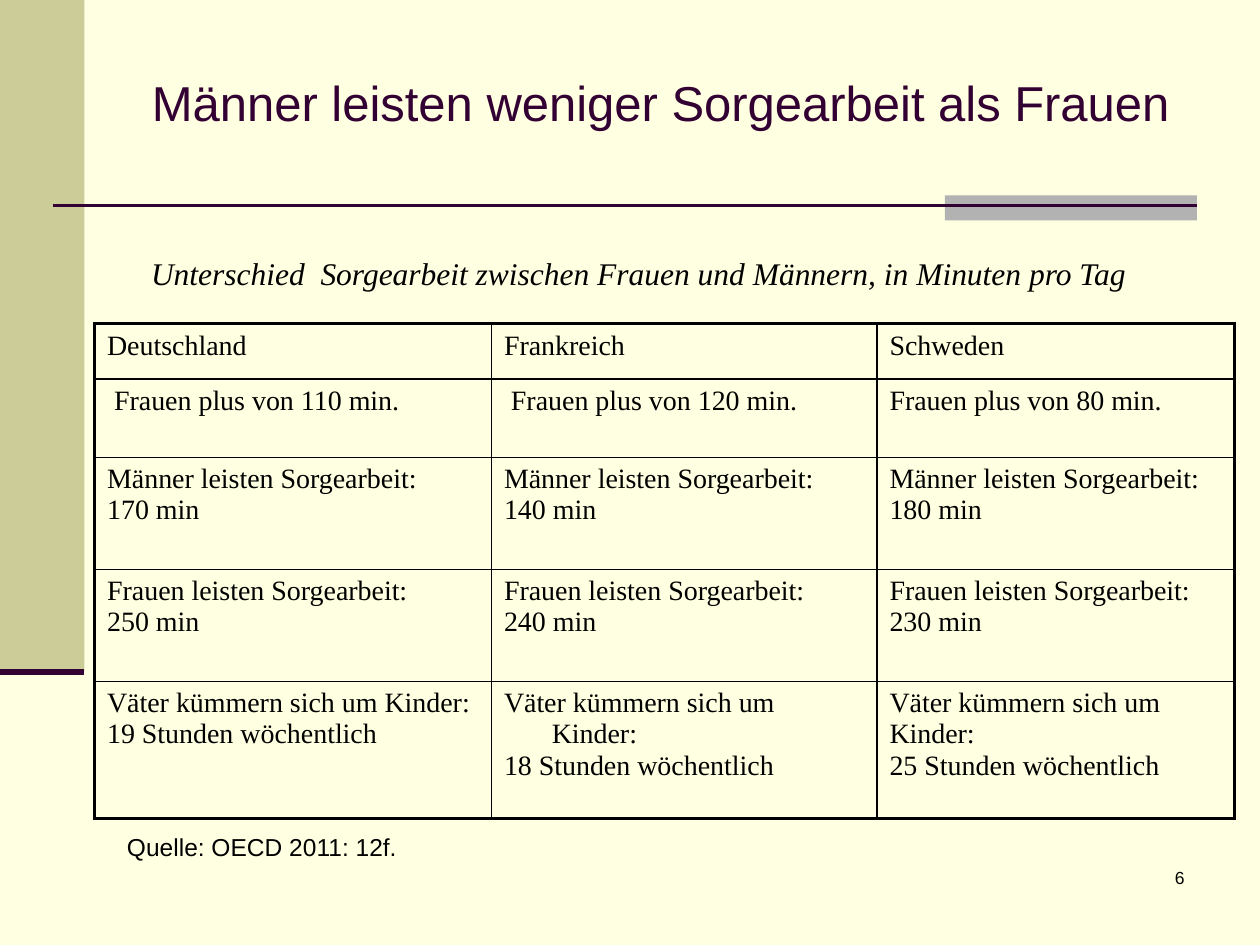
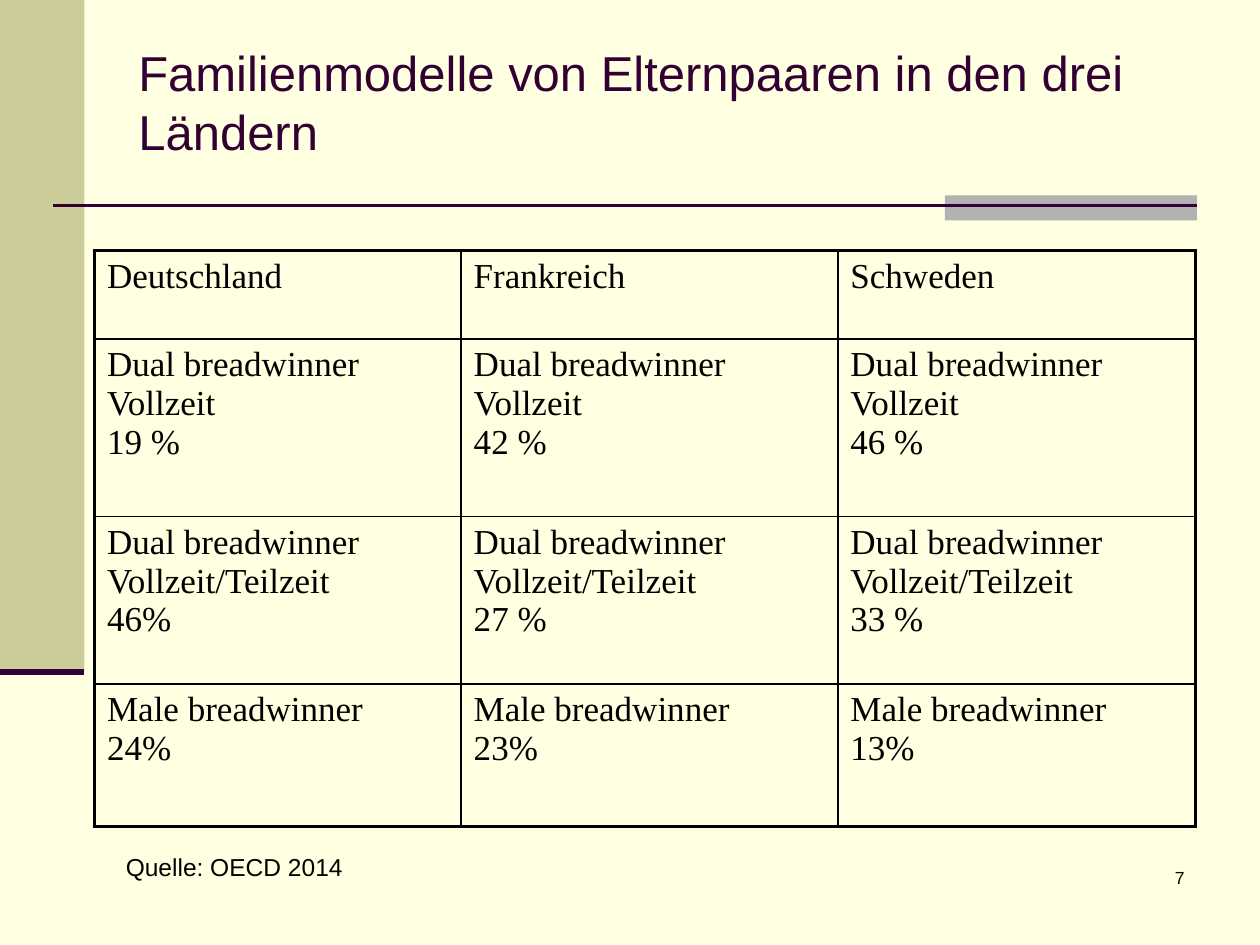
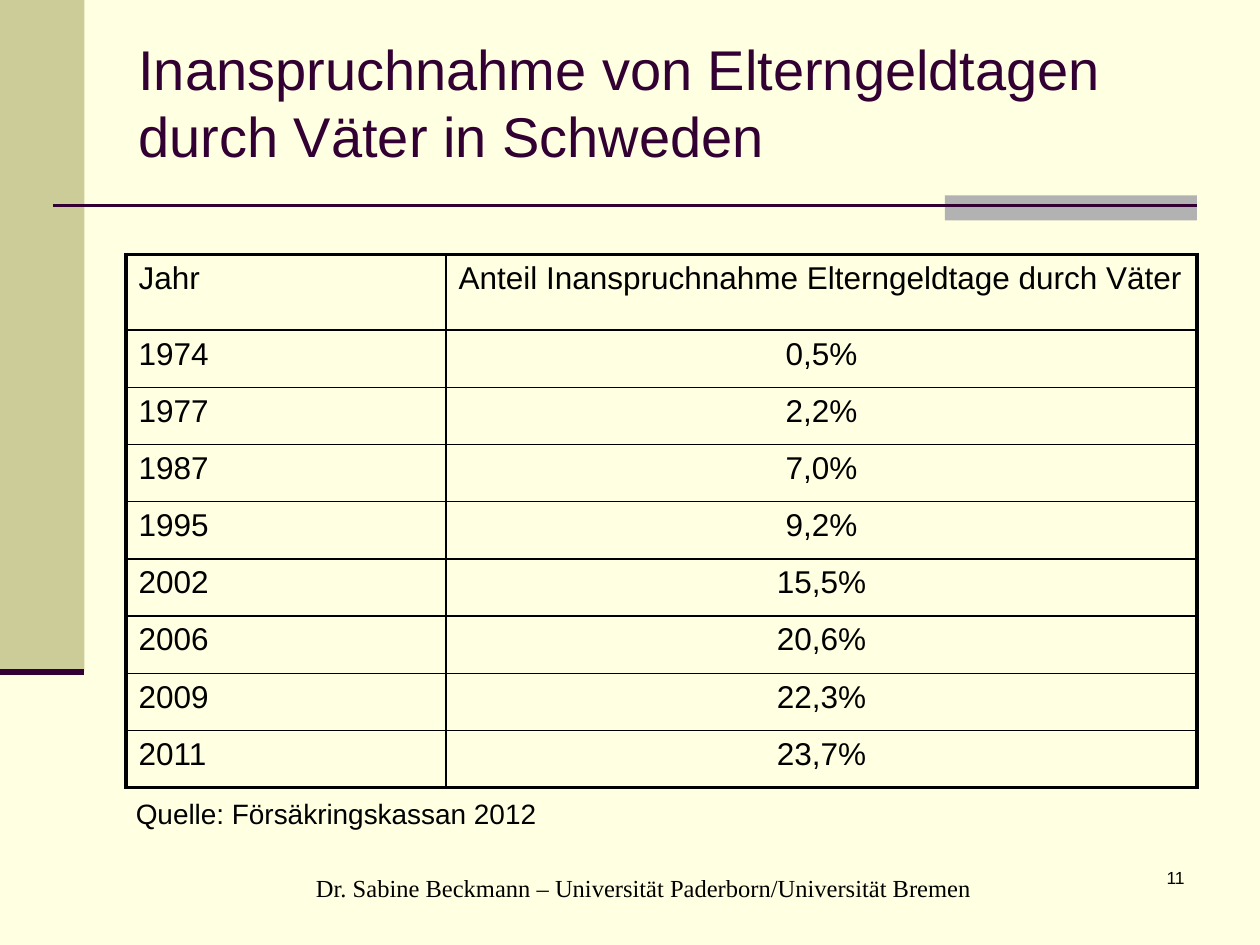
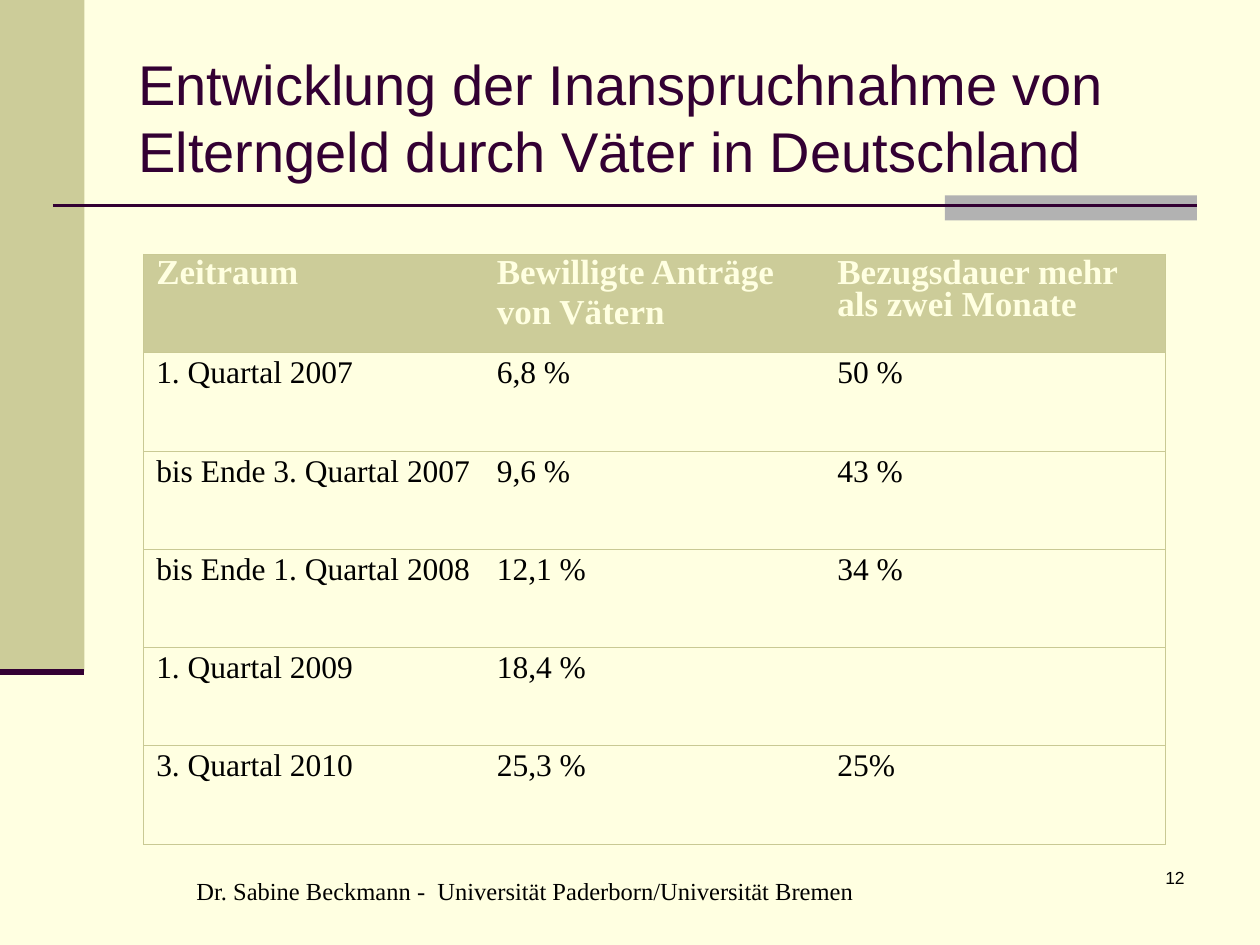
import lxml.etree
import pptx
import pptx.dml.color
import pptx.enum.shapes
import pptx.enum.text
import pptx.oxml.ns
import pptx.util

RGB = pptx.dml.color.RGBColor
ALIGN = pptx.enum.text.PP_ALIGN
ANCHOR = pptx.enum.text.MSO_ANCHOR
Pt = pptx.util.Pt
qn = pptx.oxml.ns.qn

CREAM = RGB(0xFF, 0xFF, 0xE1)
OLIVE = RGB(0xCC, 0xCC, 0x99)
OLIVE_LINE = RGB(0xC9, 0xC9, 0x94)
GREY = RGB(0xB2, 0xB2, 0xB2)
PLUM = RGB(0x33, 0x00, 0x33)
BLACK = RGB(0, 0, 0)

SANS, SERIF = "Arial", "Times New Roman"
WIDTH, HEIGHT = pptx.util.Inches(10), pptx.util.Inches(7.5)
COLUMNS, ROWS = 100, 75
HANGING = 3.8


def fmt(name, size, **more):
    return {"name": name, "size": Pt(size), **more}


def apply(target, values):
    for name, value in values.items():
        setattr(target, name, value)


class Deck:
    def __init__(self):
        self.prs = pptx.Presentation()
        apply(self.prs, {"slide_width": WIDTH, "slide_height": HEIGHT})
        fill = self.prs.slide_master.background.fill
        fill.solid()
        fill.fore_color.rgb = CREAM

    def x(self, columns):
        return round(WIDTH * columns / COLUMNS)

    def y(self, rows):
        return round(HEIGHT * rows / ROWS)

    def box(self, left, top, width, height):
        return self.x(left), self.y(top), self.x(width), self.y(height)

    def slide(self, title, number, size, title_height=10.1):
        self.s = self.prs.slides.add_slide(self.prs.slide_layouts[6])
        self.band(0, 0, 6.7, 53.3, OLIVE)
        self.band(75, 15.5, 20, 2, GREY)
        self.rule(4.2, 95, 16.3, 1.5)
        self.rule(0, 6.7, 53.3, 3.5)
        self.text(title, (10, 3, 85, title_height), fmt(SANS, size), PLUM,
                  anchor=ANCHOR.MIDDLE)
        self.text(str(number), (74.2, 68.3, 20.8, 5), fmt(SANS, 10),
                  para={"alignment": ALIGN.RIGHT})

    def band(self, left, top, width, height, color):
        sp = self.s.shapes.add_shape(pptx.enum.shapes.MSO_SHAPE.RECTANGLE,
                                     *self.box(left, top, width, height))
        sp.shadow.inherit = False
        sp.fill.solid()
        sp.fill.fore_color.rgb = color
        sp.line.fill.background()

    def rule(self, start, end, row, weight):
        line = self.s.shapes.add_connector(
            pptx.enum.shapes.MSO_CONNECTOR.STRAIGHT,
            self.x(start), self.y(row), self.x(end), self.y(row))
        line.line.color.rgb = PLUM
        line.line.width = Pt(weight)
        lxml.etree.SubElement(line._element.spPr, qn("a:effectLst"))

    def paragraph(self, p, text, font, color, para, hanging=0):
        apply(p, para)
        if hanging:
            pPr = p._p.get_or_add_pPr()
            pPr.set("marL", str(self.x(hanging)))
            pPr.set("indent", str(-self.x(hanging)))
        r = p.add_run()
        r.text = text
        apply(r.font, font)
        r.font.color.rgb = color

    def text(self, text, place, font, color=BLACK, para={}, hanging=0,
             anchor=ANCHOR.TOP, wrap=True):
        tf = self.s.shapes.add_textbox(*self.box(*place)).text_frame
        apply(tf, {"word_wrap": wrap, "vertical_anchor": anchor})
        self.paragraph(tf.paragraphs[0], text, font, color, para, hanging)
        return tf

    def border(self, cell, index, side, weight, color):
        ln = lxml.etree.Element(qn("a:ln" + side), w=str(Pt(weight)))
        if weight:
            fill = lxml.etree.SubElement(ln, qn("a:solidFill"))
            lxml.etree.SubElement(fill, qn("a:srgbClr"), val=str(color))
        else:
            lxml.etree.SubElement(ln, qn("a:noFill"))
        cell._tc.get_or_add_tcPr().insert(index, ln)

    def table(self, left, top, widths, heights, rows, font, para=({},),
              head_para=None, hanging=0, outer=2, across=1, down=1,
              line=BLACK, head=None):
        frame = self.s.shapes.add_table(
            len(rows), len(widths),
            *self.box(left, top, sum(widths), sum(heights)))
        table = frame.table
        apply(table, {"first_row": False, "horz_banding": False})
        for column, width in zip(table.columns, widths):
            column.width = self.x(width)
        for row, height in zip(table.rows, heights):
            row.height = self.y(height)
        last_row, last_col = len(rows) - 1, len(widths) - 1
        for i, texts in enumerate(rows):
            for j, text in enumerate(texts):
                cell = table.cell(i, j)
                is_head = head and i == 0
                if is_head:
                    cell.fill.solid()
                    cell.fill.fore_color.rgb = OLIVE
                else:
                    cell.fill.background()
                weights = {"L": down if j else outer,
                           "R": down if j < last_col else outer,
                           "T": across if i else outer,
                           "B": across if i < last_row else outer}
                for index, (side, weight) in enumerate(weights.items()):
                    self.border(cell, index, side, weight, line)
                formats = head_para if head_para and i == 0 else para
                tf = cell.text_frame
                for n, part in enumerate(text.split("\n") if text else []):
                    p = tf.add_paragraph() if n else tf.paragraphs[0]
                    self.paragraph(p, part, head if is_head else font,
                                   CREAM if is_head else BLACK,
                                   formats[j % len(formats)], hanging)


COUNTRIES = ["Deutschland", "Frankreich", "Schweden"]
SOURCE = {"line_spacing": 0.9, "space_before": Pt(2.8)}


def care_work(deck):
    deck.slide(" Männer leisten weniger Sorgearbeit als Frauen", 6, 28)
    tf = deck.text(
        "Unterschied  Sorgearbeit zwischen Frauen und Männern, in Minuten pro Tag",
        (11, 19.7, 80.8, 4), fmt(SERIF, 18, italic=True),
        para={"alignment": ALIGN.JUSTIFY}, anchor=ANCHOR.MIDDLE, wrap=False)
    tf.auto_size = pptx.enum.text.MSO_AUTO_SIZE.SHAPE_TO_FIT_TEXT
    rows = [
        COUNTRIES,
        [" Frauen plus von 110 min.", " Frauen plus von 120 min.",
         "Frauen plus von 80 min."],
        [f"Männer leisten Sorgearbeit:\n{n} min" for n in (170, 140, 180)],
        [f"Frauen leisten Sorgearbeit:\n{n} min" for n in (250, 240, 230)],
        ["Väter kümmern sich um Kinder:\n19 Stunden wöchentlich",
         "Väter kümmern sich um Kinder:\n18 Stunden wöchentlich",
         "Väter kümmern sich um\nKinder:\n25 Stunden wöchentlich"],
    ]
    deck.table(7.5, 25.7, [31.5, 30.6, 28.4], [4.4, 6.2, 8.9, 8.9, 10.9],
               rows, fmt(SERIF, 16), hanging=HANGING)
    deck.text("Quelle: OECD 2011: 12f.", (9.1, 65.8, 85, 4.7), fmt(SANS, 14),
              para=SOURCE, hanging=HANGING)


def family_models(deck):
    deck.slide("Familienmodelle von Elternpaaren in den drei Ländern", 7, 28)
    models = [
        ("Dual breadwinner\nVollzeit", ["19 %", "42 %", "46 %"]),
        ("Dual breadwinner\nVollzeit/Teilzeit", ["46%", "27 %", "33 %"]),
        ("Male breadwinner", ["24%", "23%", "13%"]),
    ]
    rows = [COUNTRIES] + [[f"{model}\n{share}" for share in shares]
                          for model, shares in models]
    deck.table(7.5, 19.9, [29.1, 29.9, 28.4], [7, 14.1, 13.3, 11.3],
               rows, fmt(SERIF, 20), hanging=HANGING)
    deck.text("Quelle: OECD 2014", (9, 67.4, 85, 3.9), fmt(SANS, 14),
              para=SOURCE, hanging=HANGING)


def sweden(deck):
    deck.slide("Inanspruchnahme von Elterngeldtagen durch Väter in Schweden",
               11, 32)
    rows = [
        ["Jahr", "Anteil Inanspruchnahme Elterngeldtage durch Väter"],
        ["1974", "0,5%"],
        ["1977", "2,2%"],
        ["1987", "7,0%"],
        ["1995", "9,2%"],
        ["2002", "15,5%"],
        ["2006", "20,6%"],
        ["2009", "22,3%"],
        ["2011", "23,7%"],
    ]
    year = {"alignment": ALIGN.JUSTIFY}
    deck.table(10, 20.2, [25.4, 59.6], [6] + [4.54] * 8, rows, fmt(SANS, 18),
               para=(year, {"alignment": ALIGN.CENTER}),
               head_para=(year, {"alignment": ALIGN.LEFT}), outer=2.25)
    tf = deck.text("Quelle: Försäkringskassan 2012", (9.8, 62.7, 82.6, 10.2),
                   fmt(SANS, 16), para={"space_before": Pt(3.2)},
                   hanging=HANGING)
    deck.paragraph(
        tf.add_paragraph(),
        "Dr. Sabine Beckmann – Universität Paderborn/Universität Bremen",
        fmt(SERIF, 14), BLACK,
        {"alignment": ALIGN.CENTER, "space_before": Pt(24.4)}, HANGING)


def germany(deck):
    deck.slide("Entwicklung der Inanspruchnahme von Elterngeld durch Väter "
               "in Deutschland", 12, 32, 12.5)
    rows = [
        ["Zeitraum", "Bewilligte Anträge\nvon Vätern",
         "Bezugsdauer mehr als zwei Monate"],
        ["1. Quartal 2007", "6,8 %", "50 %"],
        ["bis Ende 3. Quartal 2007", "9,6 %", "43 %"],
        ["bis Ende 1. Quartal 2008", "12,1 %", "34 %"],
        ["1. Quartal 2009", "18,4 %", ""],
        ["3. Quartal 2010", "25,3 %", "25%"],
    ]
    deck.table(11.4, 20.2, [27.03] * 3, [7.8] * 6, rows, fmt(SERIF, 18),
               para=({"line_spacing": Pt(18), "space_before": Pt(4.8)},),
               outer=0.75, across=0.75, down=0, line=OLIVE_LINE,
               head=fmt(SERIF, 20, bold=True))
    deck.text("Dr. Sabine Beckmann -  Universität Paderborn/Universität Bremen",
              (14.6, 69, 58.9, 3.9), fmt(SERIF, 14),
              para={"space_before": Pt(2.8)}, hanging=HANGING)


def main():
    deck = Deck()
    for build in (care_work, family_models, sweden, germany):
        build(deck)
    deck.prs.save("out.pptx")


if __name__ == "__main__":
    main()
